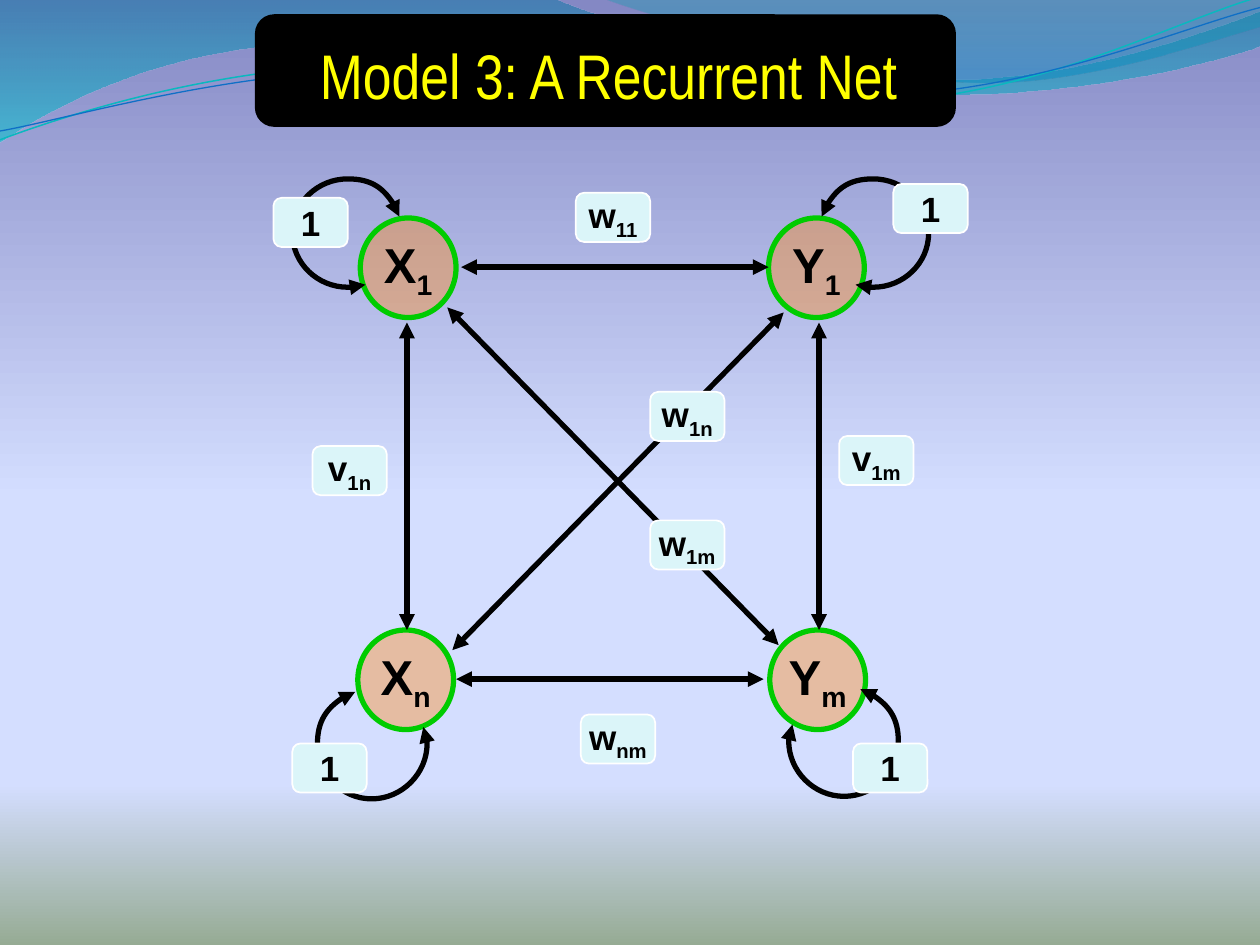
from lxml import etree
from pptx import Presentation
from pptx.dml.color import RGBColor
from pptx.enum.shapes import MSO_CONNECTOR, MSO_SHAPE
from pptx.enum.text import MSO_ANCHOR, PP_ALIGN
from pptx.oxml.ns import qn
from pptx.util import Inches, Pt

OVAL = MSO_SHAPE.OVAL
ROUNDED = MSO_SHAPE.ROUNDED_RECTANGLE
STRAIGHT = MSO_CONNECTOR.STRAIGHT
CENTER = PP_ALIGN.CENTER
TOP, MIDDLE = MSO_ANCHOR.TOP, MSO_ANCHOR.MIDDLE

COLORS = {
    "ink": "000000", "title": "FFFF00", "node": "FF8B17", "ring": "00CC00",
    "label": "DBF5F9", "edge": "FFFFFF", "teal": "0AB8BF", "blue": "0F6FC6",
}
SKY = [(0, "8488C4", 100), (53, "D4DEFF", 100), (83, "D4DEFF", 100), (100, "96AB94", 100)]
DEEP_WAVE = [(0, "0074A1", 45), (100, "00C6CF", 55)]
LIGHT_WAVE = [(0, "00A1A9", 30), (80, "008BBF", 45)]

DEEP_OUTLINE = [
    [(0, 0)], [(4.4, -0.01)],
    [(4.76, 0.17), (6.64, 0.63), (7.58, 0.63)],
    [(8.53, 0.63), (9.58, 0.26), (10, 0.09)], [(10.01, 0.36)],
    [(9.83, 0.44), (8.7, 0.76), (7.46, 0.75)],
    [(6.22, 0.75), (3.82, 0.28), (2.57, 0.34)],
    [(1.29, 0.36), (0.46, 0.83), (-0.01, 1.13)],
]
LIGHT_OUTLINE = [
    [(4.79, -0.01)],
    [(5.09, 0.11), (6.82, 0.62), (7.69, 0.65)],
    [(8.56, 0.69), (9.61, 0.32), (10, 0.21)], [(10, 0)],
]
TEAL_CURVE = [
    [(0, 1.11)],
    [(0.48, 0.93), (1.58, 0.57), (2.77, 0.52)],
    [(3.95, 0.47), (5.93, 0.89), (7.13, 0.8)],
    [(8.33, 0.71), (9.38, 0.15), (9.98, -0.02)],
]
BLUE_CURVE = [
    [(0, 1.04)],
    [(0.47, 0.96), (1.64, 0.61), (2.83, 0.56)],
    [(4.03, 0.51), (5.97, 0.84), (7.17, 0.75)],
    [(8.36, 0.67), (9.41, 0.21), (10, 0.06)],
]
TOP_LOOP = [
    [(3.17, 1.72)],
    [(3.11, 1.54), (2.95, 1.42), (2.76, 1.42)],
    [(2.52, 1.42), (2.32, 1.61), (2.32, 1.85)],
    [(2.32, 2.09), (2.52, 2.28), (2.76, 2.28)],
    [(2.81, 2.28), (2.85, 2.28), (2.9, 2.26)],
]
BOTTOM_LOOP = [
    [(2.82, 5.49)],
    [(2.64, 5.55), (2.52, 5.72), (2.52, 5.9)],
    [(2.52, 6.14), (2.71, 6.34), (2.95, 6.34)],
    [(3.19, 6.34), (3.39, 6.14), (3.39, 5.9)],
    [(3.39, 5.86), (3.38, 5.81), (3.36, 5.77)],
]
NODES = [("Y", "1", 6.1, 1.73), ("Y", "m", 6.11, 5), ("X", "1", 2.86, 1.73), ("X", "n", 2.84, 5)]
LINKS = [
    ((3.66, 2.12), (6.1, 2.12)), ((3.62, 5.39), (6.06, 5.39)),
    ((3.23, 5), (3.23, 2.56)), ((6.5, 5), (6.5, 2.56)),
    ((3.59, 5.16), (6.22, 2.48)), ((6.18, 5.12), (3.55, 2.44)),
]
LABELS = [
    ("w", "11", 4.57, 1.53), ("w", "nm", 4.61, 5.67), ("1", "", 7.09, 1.46),
    ("v", "1m", 6.66, 3.46), ("v", "1n", 2.48, 3.54), ("w", "1n", 5.16, 3.11),
    ("w", "1m", 5.16, 4.13), ("1", "", 6.77, 5.9), ("1", "", 2.32, 5.9), ("1", "", 2.17, 1.57),
]


def color(name):
    return RGBColor.from_string(COLORS[name])


def mirrored(outline, width, drop=0):
    return [[(width - x, y + drop) for x, y in step] for step in outline]


class NetPage:
    font = "Arial"
    title_font = "Arial Narrow"
    stroke = 3

    def __init__(self, page):
        self.page = page
        self.shapes = page.shapes

    def gradient(self, fill, element, stops):
        fill.gradient()
        fill.gradient_angle = 270
        stop_list = element.find(".//" + qn("a:gsLst"))
        for stop in list(stop_list):
            stop_list.remove(stop)
        for position, shade, opacity in stops:
            stop = etree.SubElement(stop_list, qn("a:gs"), pos=str(position * 1000))
            self.opacity(etree.SubElement(stop, qn("a:srgbClr"), val=shade), opacity)

    def opacity(self, shade, percent):
        etree.SubElement(shade, qn("a:alpha"), val=str(percent * 1000))

    def outline(self, shape, name, width):
        shape.line.color.rgb = color(name)
        shape.line.width = Pt(width)

    def arrowheads(self, shape):
        line = shape._element.spPr.find(qn("a:ln"))
        for end in ("a:headEnd", "a:tailEnd"):
            etree.SubElement(line, qn(end), type="triangle")

    def box(self, kind, left, top, width, height, fill, line, line_width):
        shape = self.shapes.add_shape(kind, Inches(left), Inches(top), Inches(width), Inches(height))
        shape.shadow.inherit = False
        shape.fill.solid()
        shape.fill.fore_color.rgb = color(fill)
        self.outline(shape, line, line_width)
        return shape

    def symbol(self, shape, letter, index, size):
        frame = shape.text_frame
        frame.word_wrap = False
        frame.vertical_anchor = MIDDLE
        para = frame.paragraphs[0]
        para.alignment = CENTER
        para.font.name, para.font.size, para.font.bold = self.font, Pt(size), True
        para.font.color.rgb = color("ink")
        para.add_run().text = letter
        if index:
            span = para.add_run()
            span.text = index
            span._r.get_or_add_rPr().set("baseline", "-25000")

    def node(self, letter, index, left, top):
        shape = self.box(OVAL, left, top, 0.76, 0.79, "node", "ring", self.stroke)
        self.opacity(shape._element.spPr.find(qn("a:solidFill"))[0], 40)
        self.symbol(shape, letter, index, 28)

    def label(self, letter, index, left, top):
        shape = self.box(ROUNDED, left, top, 0.59, 0.39, "label", "edge", 1)
        self.symbol(shape, letter, index, 20)

    def link(self, start, end):
        line = self.shapes.add_connector(STRAIGHT, *map(Inches, start + end))
        etree.SubElement(line._element.spPr, qn("a:effectLst"))
        self.outline(line, "ink", self.stroke)
        self.arrowheads(line)

    def curve(self, outline, closed=False):
        steps = [[(Inches(x), Inches(y)) for x, y in step] for step in outline]
        builder = self.shapes.build_freeform(*steps[0][0], scale=1.0)
        builder.add_line_segments([point for step in steps[1:] for point in step], close=closed)
        shape = builder.convert_to_shape()
        shape.shadow.inherit = False
        segments = iter(shape._element.findall(".//" + qn("a:lnTo")))
        for step in steps[1:]:
            parts = [next(segments) for _ in step]
            if len(parts) == 3:
                bezier = etree.Element(qn("a:cubicBezTo"))
                parts[0].addprevious(bezier)
                for part in parts:
                    bezier.append(part[0])
                    part.getparent().remove(part)
        return shape

    def wave(self, outline, stops):
        shape = self.curve(outline, closed=True)
        self.gradient(shape.fill, shape._element.spPr, stops)
        shape.line.fill.background()

    def stroke_curve(self, outline, name, width):
        shape = self.curve(outline)
        shape.fill.background()
        self.outline(shape, name, width)
        return shape

    def loop(self, outline):
        self.arrowheads(self.stroke_curve(outline, "ink", self.stroke))

    def title(self, text):
        self.box(ROUNDED, 2.03, 0.12, 5.55, 0.88, "ink", "ink", 1)
        title = self.shapes.title
        title.left, title.top, title.width, title.height = map(Inches, (2.19, 0.24, 5.28, 0.62))
        self.shapes._spTree.append(title._element)
        frame = title.text_frame
        frame.text = text
        frame.word_wrap = False
        frame.vertical_anchor = TOP
        para = frame.paragraphs[0]
        para.alignment = CENTER
        para.font.name, para.font.size = self.title_font, Pt(36)
        para.font.color.rgb = color("title")


def main():
    deck = Presentation()
    deck.slide_width, deck.slide_height = Inches(10), Inches(7.5)
    page = deck.slides.add_slide(deck.slide_layouts[5])
    net = NetPage(page)
    net.gradient(page.background.fill, page._element, SKY)
    net.wave(DEEP_OUTLINE, DEEP_WAVE)
    net.wave(LIGHT_OUTLINE, LIGHT_WAVE)
    net.stroke_curve(TEAL_CURVE, "teal", 0.85)
    net.stroke_curve(BLUE_CURVE, "blue", 0.75)
    net.title("Model 3: A Recurrent Net")
    for node in NODES:
        net.node(*node)
    for link in LINKS:
        net.link(*link)
    for loop in (TOP_LOOP, BOTTOM_LOOP, mirrored(BOTTOM_LOOP, 9.65, -0.02), mirrored(TOP_LOOP, 9.69)):
        net.loop(loop)
    for label in LABELS:
        net.label(*label)
    deck.save("out.pptx")


if __name__ == "__main__":
    main()
